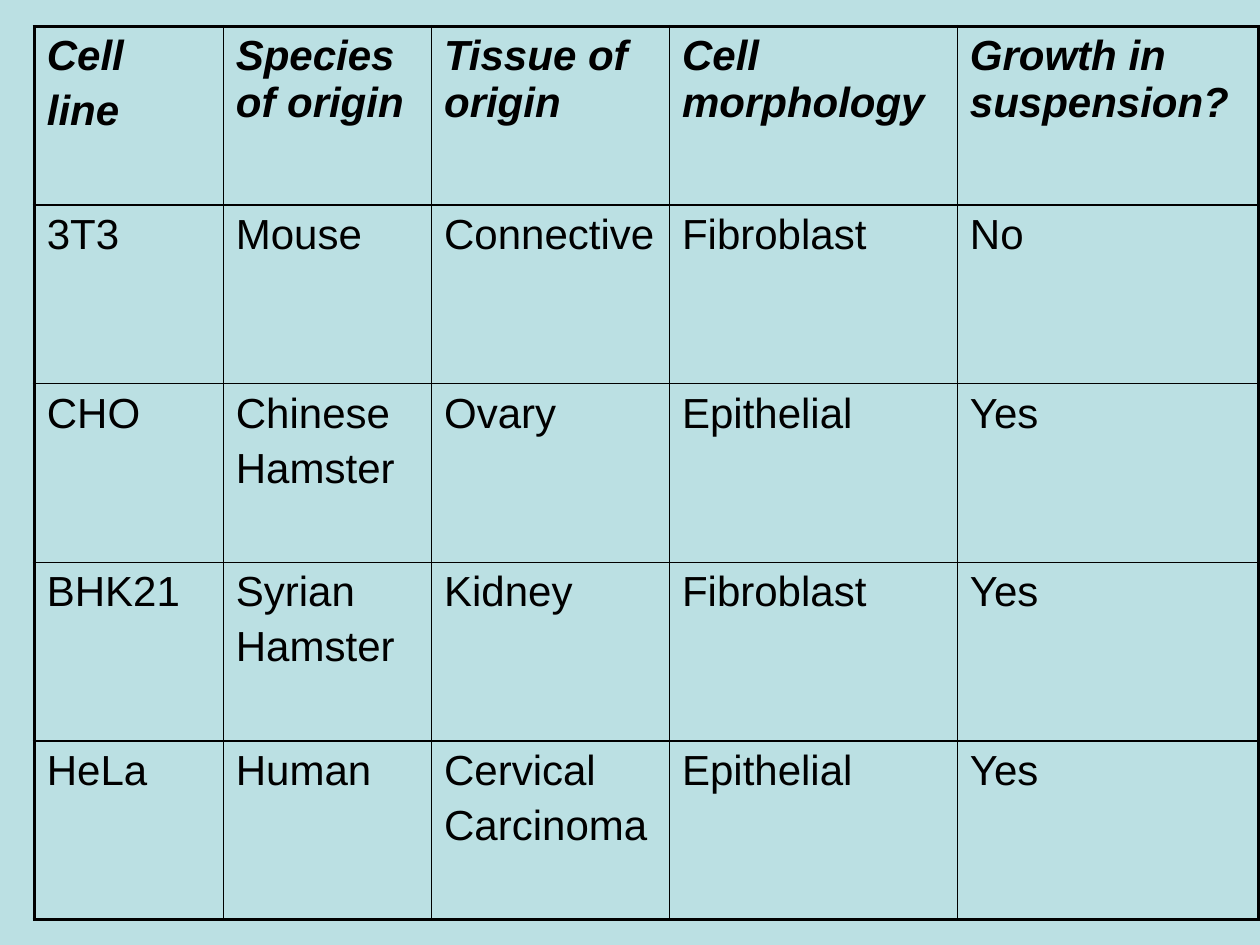
"""Build a slide with a table of common cell lines."""
from lxml import etree
from pptx import Presentation
from pptx import util as u
from pptx.dml import color
from pptx.oxml import ns

BLACK, PALE_BLUE = "000000", "BBE0E3"
THICK, THIN = u.Pt(2.25), u.Pt(1)
COLUMN_WIDTHS = (108, 119, 136, 164.5, 172.5)
ROW_HEIGHT = 102.1
CELL_LINES = (
    ("Cell\nline", "Species of origin", "Tissue of origin", "Cell morphology", "Growth in suspension?"),
    ("3T3", "Mouse", "Connective", "Fibroblast", "No"),
    ("CHO", "Chinese\nHamster", "Ovary", "Epithelial", "Yes"),
    ("BHK21", "Syrian\nHamster", "Kidney", "Fibroblast", "Yes"),
    ("HeLa", "Human", "Cervical\nCarcinoma", "Epithelial", "Yes"),
)


def rgb(value):
    """Return the colour for a hex string."""
    return color.RGBColor.from_string(value)


def set_borders(cell, widths):
    """Draw black borders of the given widths, keyed by side."""
    properties = cell._tc.get_or_add_tcPr()
    for side, width in widths.items():
        line = etree.SubElement(properties, ns.qn(f"a:ln{side}"), w=str(width))
        fill = etree.SubElement(line, ns.qn("a:solidFill"))
        etree.SubElement(fill, ns.qn("a:srgbClr"), val=BLACK)


def write_cell(cell, content, heading):
    """Write the lines of a cell, bold and italic for a heading."""
    cell.text_frame.text = content
    for index, paragraph in enumerate(cell.text_frame.paragraphs):
        paragraph.space_before = u.Pt(4.8 if index else 0)
        for run in paragraph.runs:
            font = run.font
            font.name, font.size = "Arial", u.Pt(24)
            font.bold = font.italic = heading
            font.color.rgb = rgb(BLACK)


def add_grid(slide, rows):
    """Add the table with a thick frame and thin inner lines."""
    last_row, last_column = len(rows) - 1, len(COLUMN_WIDTHS) - 1
    table = slide.shapes.add_table(
        len(rows), len(COLUMN_WIDTHS), u.Pt(19.6), u.Pt(15.1),
        u.Pt(sum(COLUMN_WIDTHS)), u.Pt(ROW_HEIGHT * len(rows))).table
    table.first_row = table.horz_banding = False
    for column, width in zip(table.columns, COLUMN_WIDTHS):
        column.width = u.Pt(width)
    for i, contents in enumerate(rows):
        table.rows[i].height = u.Pt(ROW_HEIGHT)
        for j, content in enumerate(contents):
            cell = table.cell(i, j)
            write_cell(cell, content, heading=i == 0)
            outer = {"L": j == 0, "R": j == last_column, "T": i == 0, "B": i == last_row}
            set_borders(cell, {side: THICK if edge else THIN for side, edge in outer.items()})
            cell.fill.background()


def main():
    """Build and save the presentation."""
    presentation = Presentation()
    presentation.slide_width, presentation.slide_height = u.Pt(720), u.Pt(540)
    slide = presentation.slides.add_slide(presentation.slide_layouts[6])
    slide.background.fill.solid()
    slide.background.fill.fore_color.rgb = rgb(PALE_BLUE)
    add_grid(slide, CELL_LINES)
    presentation.save("out.pptx")


if __name__ == "__main__":
    main()
